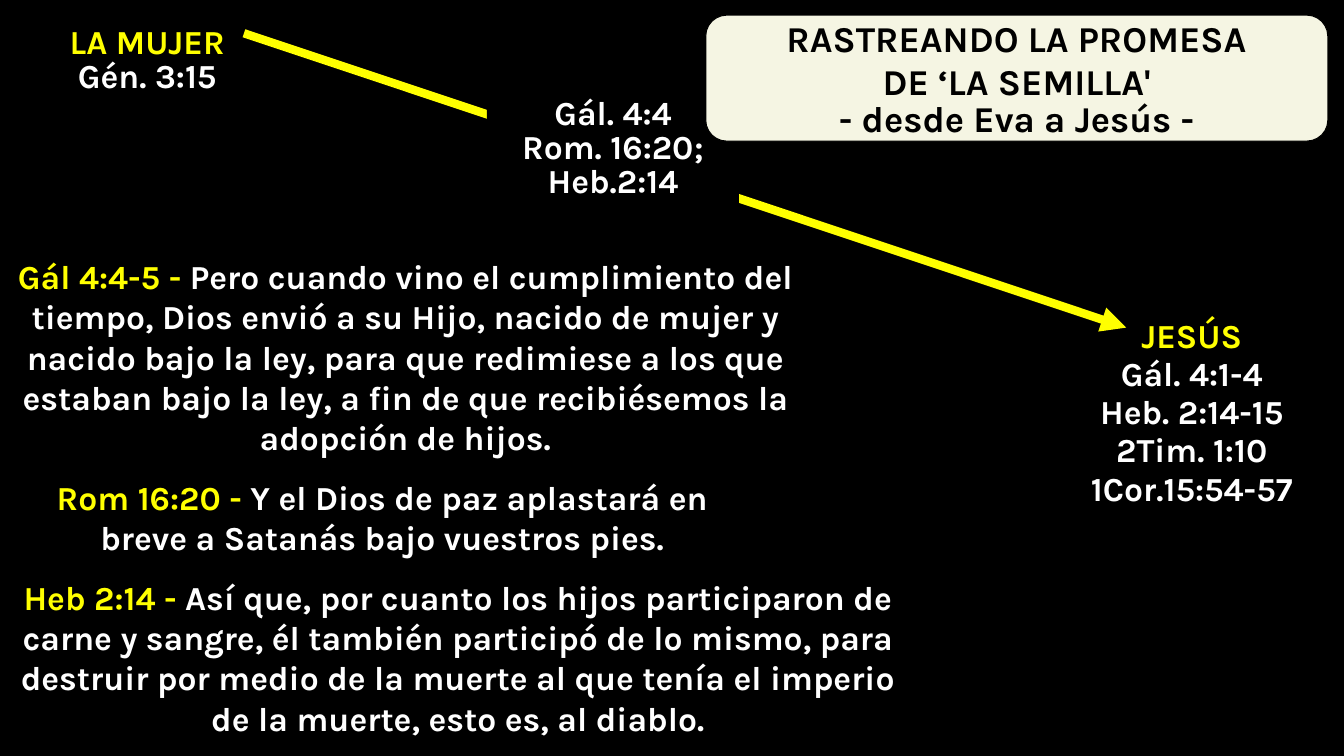
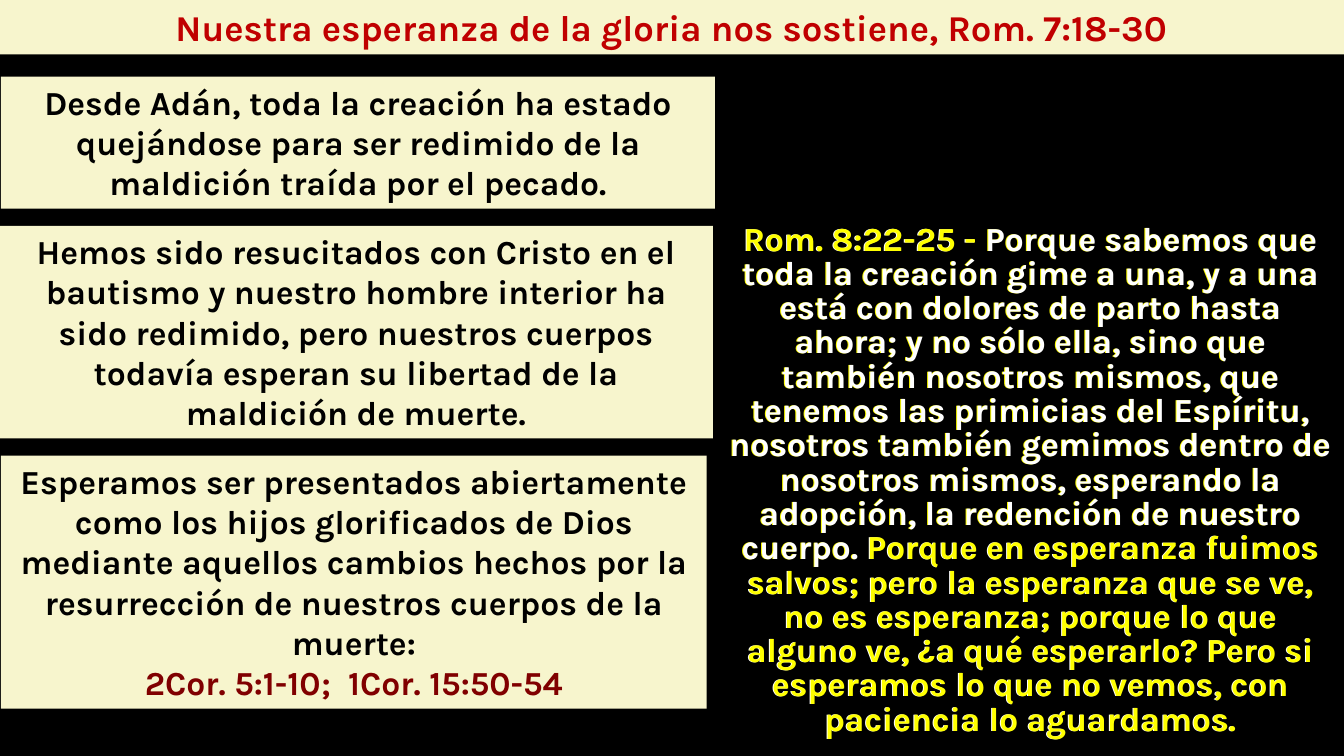
from lxml import etree
from pptx import Presentation
from pptx import util as u
from pptx.dml.color import RGBColor
from pptx.enum import shapes, text
from pptx.oxml import ns

BLACK = RGBColor(0, 0, 0)
WHITE = RGBColor(255, 255, 255)
YELLOW = RGBColor(255, 255, 0)
CREAM = RGBColor(0xF7, 0xF5, 0xCD)
IVORY = RGBColor(0xF5, 0xF5, 0xE3)
RED = RGBColor(0xC0, 0, 0)
MAROON = RGBColor(0x80, 0, 0)
FONT, BODY_SIZE, TITLE_SIZE = "Karla", 24, 26
WIDTH, HEIGHT = 13.33, 7.5
ROW, PADDING = 0.4, 0.11
TIGHT, MEDIUM, FULL = 0.85, 0.95, 1.0

PROMISE_TITLE = ["RASTREANDO LA PROMESA", "DE ‘LA SEMILLA'", "- desde Eva a Jesús -"]
PROMISE_BOX = (7, 0.15, 6.17, 1.25)
WOMAN = [[("LA MUJER", YELLOW)], [("Gén. 3:15", WHITE)]]
JESUS = [[("JESÚS", YELLOW)]] + [
    [(reference, WHITE)]
    for reference in ("Gál. 4:1-4", "Heb. 2:14-15", "2Tim. 1:10", "1Cor.15:54-57")
]
FULFILMENT = [[("Gál. 4:4", WHITE)], [("Rom. 16:20; Heb.2:14", WHITE)]]
VERSES = [
    ("Gál 4:4-5 - ",
     "Pero cuando vino el cumplimiento del tiempo, Dios envió a su Hijo, nacido de mujer "
     "y nacido bajo la ley, para que redimiese a los que estaban bajo la ley, a fin de que "
     "recibiésemos la adopción de hijos.", 0.02, 8, 5),
    ("Rom 16:20 - ",
     "Y el Dios de paz aplastará en breve a Satanás bajo vuestros pies.", 0, 7.58, 2),
    ("Heb 2:14 - ",
     "Así que, por cuanto los hijos participaron de carne y sangre, él también participó "
     "de lo mismo, para destruir por medio de la muerte al que tenía el imperio de la "
     "muerte, esto es, al diablo.", 0, 9.08, 4),
]

HOPE_TITLE = ["Nuestra esperanza de la gloria nos sostiene, Rom. 7:18-30"]
HOPES = [
    ([[("Desde Adán, toda la creación ha estado quejándose para ser redimido de la "
        "maldición traída por el pecado.", BLACK)]], 0.01, 7.08, 3),
    ([[("Hemos sido resucitados con Cristo en el bautismo y nuestro hombre interior ha "
        "sido redimido, pero nuestros cuerpos todavía esperan su libertad de la "
        "maldición de muerte.", BLACK)]], -0.01, 7.08, 5),
    ([[("Esperamos ser presentados abiertamente como los hijos glorificados de Dios "
        "mediante aquellos cambios hechos por la resurrección de nuestros cuerpos de la "
        "muerte:", BLACK)],
      [("2Cor. 5:1-10;  1Cor. 15:50-54", MAROON)]], 0.01, 7, 6),
]
ROMANS = [
    "Rom. 8:22-25 - ",
    "Porque sabemos que toda la creación gime a una, y a una está con dolores de parto "
    "hasta ahora; y no sólo ella, sino que también nosotros mismos, que tenemos las "
    "primicias del Espíritu, nosotros también gemimos dentro de nosotros mismos, "
    "esperando la adopción, la redención de nuestro cuerpo. ",
    "Porque en esperanza fuimos salvos; pero la esperanza que se ve, no es esperanza; "
    "porque lo que alguno ve, ¿a qué esperarlo? Pero si esperamos lo que no vemos, con "
    "paciencia lo aguardamos.",
]
ROMANS_LAYERS = [(7.09, (WHITE, YELLOW, WHITE)), (7.1, (YELLOW, WHITE, YELLOW))]


def inches(values):
    return [u.Inches(value) for value in values]


def write(frame, paragraphs, size, spacings):
    for index, (runs, spacing) in enumerate(zip(paragraphs, spacings)):
        paragraph = frame.paragraphs[0] if index == 0 else frame.add_paragraph()
        paragraph.alignment = text.PP_ALIGN.CENTER
        paragraph.line_spacing = spacing
        paragraph.space_before = u.Pt(0)
        for words, colour in runs:
            run = paragraph.add_run()
            run.text = words
            run.font.name = FONT
            run.font.size = u.Pt(size)
            run.font.bold = True
            run.font.color.rgb = colour


def paint(shape, colour):
    shape.fill.solid()
    shape.fill.fore_color.rgb = colour


def add_passage(slide, box, paragraphs, spacing=FULL, fill=None):
    passage = slide.shapes.add_textbox(*inches(box))
    frame = passage.text_frame
    frame.word_wrap = True
    frame.auto_size = text.MSO_AUTO_SIZE.SHAPE_TO_FIT_TEXT
    if fill is not None:
        paint(passage, fill)
    write(frame, paragraphs, BODY_SIZE, [spacing] * len(paragraphs))


def set_title(slide, box, lines, colour, spacings, wrap=True):
    title = slide.shapes.title
    title.left, title.top, title.width, title.height = inches(box)
    frame = title.text_frame
    frame.word_wrap = wrap
    frame.auto_size = text.MSO_AUTO_SIZE.NONE
    frame.vertical_anchor = text.MSO_ANCHOR.MIDDLE
    write(frame, [[(line, colour)] for line in lines], TITLE_SIZE, spacings)
    return title


def stack(items, top, gap):
    for *content, left, width, rows in items:
        height = PADDING + ROW * rows
        yield content, (left, top, width, height)
        top += height + gap


def add_arrow(slide, start, end):
    arrow = slide.shapes.add_connector(
        shapes.MSO_CONNECTOR.STRAIGHT, *inches(start + end))
    arrow.line.color.rgb = YELLOW
    arrow.line.width = u.Pt(6)
    etree.SubElement(arrow.line._get_or_add_ln(), ns.qn("a:tailEnd"), type="triangle")
    etree.SubElement(arrow._element.spPr, ns.qn("a:effectLst"))


def build_promise(slide):
    add_passage(slide, (0.5, 0.22, 1.92, 0.79), WOMAN, TIGHT)
    add_passage(slide, (10.5, 3.1, 2.64, 2.02), JESUS, MEDIUM)
    add_arrow(slide, (2.42, 0.33), (11.17, 3.25))
    add_passage(slide, (4.83, 0.92, 2.5, 1.13), FULFILMENT, TIGHT, BLACK)
    plate = slide.shapes.add_shape(
        shapes.MSO_SHAPE.ROUNDED_RECTANGLE, *inches(PROMISE_BOX))
    plate.shadow.inherit = False
    paint(plate, IVORY)
    plate.line.color.rgb = BLACK
    plate.line.width = u.Pt(0.75)
    title = set_title(slide, PROMISE_BOX, PROMISE_TITLE, BLACK,
                      (FULL, FULL, TIGHT), wrap=False)
    plate._element.addnext(title._element)
    for (reference, verse), box in stack(VERSES, 2.49, 0.08):
        add_passage(slide, box, [[(reference, YELLOW), (verse, WHITE)]])


def build_hope(slide):
    banner = set_title(slide, (0, 0, WIDTH, 0.54), HOPE_TITLE, RED, (FULL,))
    paint(banner, CREAM)
    for (paragraphs,), box in stack(HOPES, 0.76, 0.17):
        add_passage(slide, box, paragraphs, fill=CREAM)
    for left, colours in ROMANS_LAYERS:
        add_passage(slide, (left, 2.17, 6.24, 5.25), [list(zip(ROMANS, colours))], TIGHT)


def main():
    deck = Presentation()
    deck.slide_width, deck.slide_height = inches((WIDTH, HEIGHT))
    backdrop = deck.slide_master.background.fill
    backdrop.solid()
    backdrop.fore_color.rgb = BLACK
    title_only = deck.slide_layouts[5]
    for build in (build_promise, build_hope):
        build(deck.slides.add_slide(title_only))
    deck.save("out.pptx")


if __name__ == "__main__":
    main()
